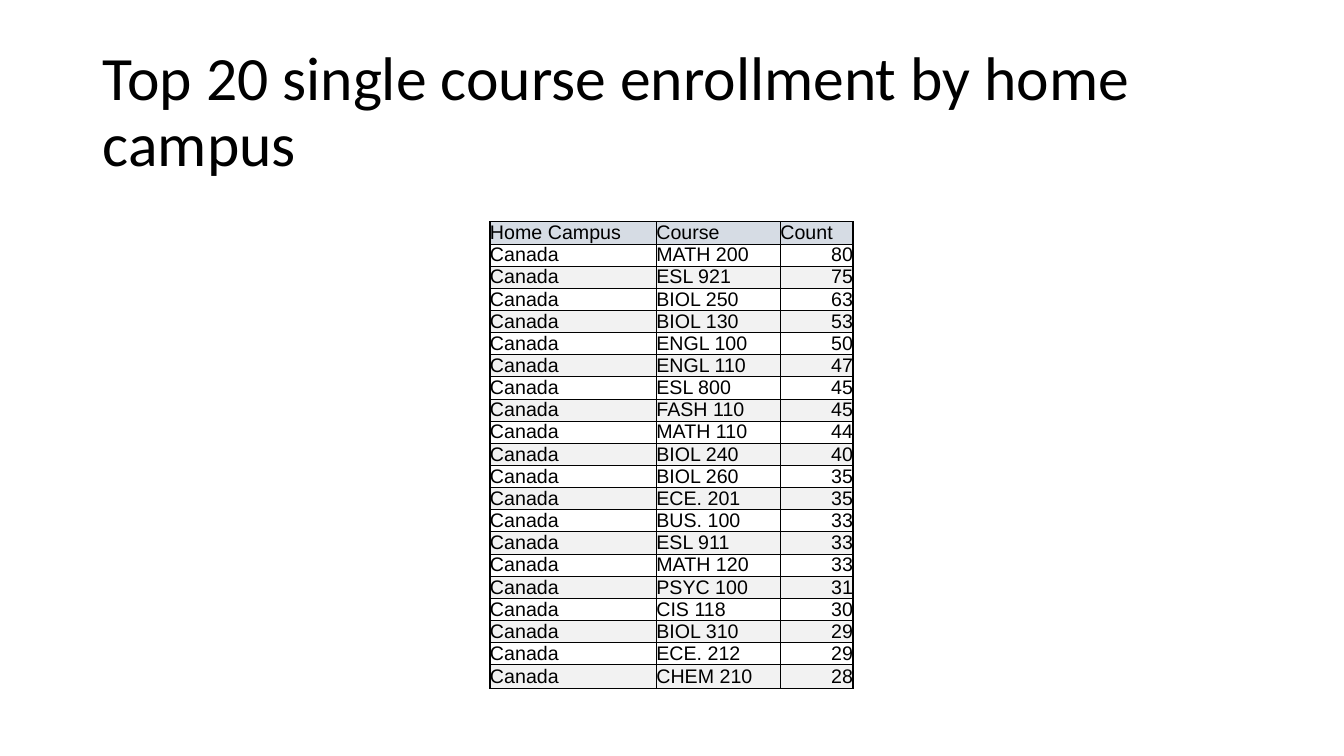
from dataclasses import dataclass

from lxml import etree
from pptx import Presentation
from pptx.dml.color import RGBColor
from pptx.enum.text import MSO_ANCHOR, MSO_AUTO_SIZE, PP_ALIGN
from pptx.oxml.ns import qn
from pptx.util import Inches, Pt

LEFT, RIGHT = PP_ALIGN.LEFT, PP_ALIGN.RIGHT
MIDDLE, BOTTOM = MSO_ANCHOR.MIDDLE, MSO_ANCHOR.BOTTOM
FIXED = MSO_AUTO_SIZE.NONE


@dataclass(frozen=True)
class Theme:
    ink: str = "000000"
    head: str = "D6DCE4"
    band: str = "F2F2F2"
    title_font: str = "Calibri"
    body_font: str = "Arial"
    title_size: int = 44
    body_size: int = 14
    thin: float = 0.5
    thick: float = 1


THEME = Theme()
TITLE = "Top 20 single course enrollment by home campus"
HEADS = ("Home Campus", "Course", "Count")
CAMPUS = "Canada"
COUNTS = (
    ("MATH 200", 80), ("ESL 921", 75), ("BIOL 250", 63), ("BIOL 130", 53),
    ("ENGL 100", 50), ("ENGL 110", 47), ("ESL 800", 45), ("FASH 110", 45),
    ("MATH 110", 44), ("BIOL 240", 40), ("BIOL 260", 35), ("ECE. 201", 35),
    ("BUS. 100", 33), ("ESL 911", 33), ("MATH 120", 33), ("PSYC 100", 31),
    ("CIS 118", 30), ("BIOL 310", 29), ("ECE. 212", 29), ("CHEM 210", 28),
)
WIDTHS = (1.65, 1.23, 0.72)
ROW = 0.22
LAST_ROW = 0.23


def style(para, font, size, align):
    para.alignment = align
    for run in para.runs:
        run.font.name = font
        run.font.size = Pt(size)
        run.font.color.rgb = RGBColor.from_string(THEME.ink)


def add_title(slide):
    title = slide.shapes.title
    title.left, title.top = Inches(0.92), Inches(0.4)
    title.width, title.height = Inches(11.5), Inches(1.45)
    frame = title.text_frame
    frame.text = TITLE
    frame.word_wrap = True
    frame.auto_size = FIXED
    frame.vertical_anchor = MIDDLE
    para = frame.paragraphs[0]
    para.line_spacing = 0.9
    style(para, THEME.title_font, THEME.title_size, LEFT)


def add_edges(cell, row, col):
    outer = {"L": col == 0, "R": col == len(HEADS) - 1, "T": row == 0, "B": False}
    props = cell._tc.get_or_add_tcPr()
    for side, thick in outer.items():
        width = Pt(THEME.thick if thick else THEME.thin)
        line = etree.SubElement(props, qn(f"a:ln{side}"), w=str(width))
        fill = etree.SubElement(line, qn("a:solidFill"))
        etree.SubElement(fill, qn("a:srgbClr"), val=THEME.ink)


def paint(cell, row):
    if row and row % 2:
        cell.fill.background()
        return
    cell.fill.solid()
    cell.fill.fore_color.rgb = RGBColor.from_string(THEME.band if row else THEME.head)


def fill_cell(cell, value, row, col):
    cell.text = str(value)
    cell.margin_left = cell.margin_right = 0
    cell.margin_top = cell.margin_bottom = 0
    cell.vertical_anchor = BOTTOM
    align = RIGHT if isinstance(value, int) else LEFT
    style(cell.text_frame.paragraphs[0], THEME.body_font, THEME.body_size, align)
    add_edges(cell, row, col)
    paint(cell, row)


def add_grid(slide):
    data = [HEADS] + [(CAMPUS, course, count) for course, count in COUNTS]
    high = ROW * (len(data) - 1) + LAST_ROW
    table = slide.shapes.add_table(
        len(data), len(HEADS), Inches(4.86), Inches(2.2),
        Inches(sum(WIDTHS)), Inches(high),
    ).table
    table.first_row = table.horz_banding = False
    for col, width in zip(table.columns, WIDTHS):
        col.width = Inches(width)
    for row in table.rows:
        row.height = Inches(ROW)
    table.rows[len(data) - 1].height = Inches(LAST_ROW)
    for row, values in enumerate(data):
        for col, value in enumerate(values):
            fill_cell(table.cell(row, col), value, row, col)


def main():
    """Build the course enrollment slide and save it."""
    deck = Presentation()
    deck.slide_width, deck.slide_height = Inches(13.33), Inches(7.5)
    slide = deck.slides.add_slide(deck.slide_layouts[5])
    add_title(slide)
    add_grid(slide)
    deck.save("out.pptx")


if __name__ == "__main__":
    main()
